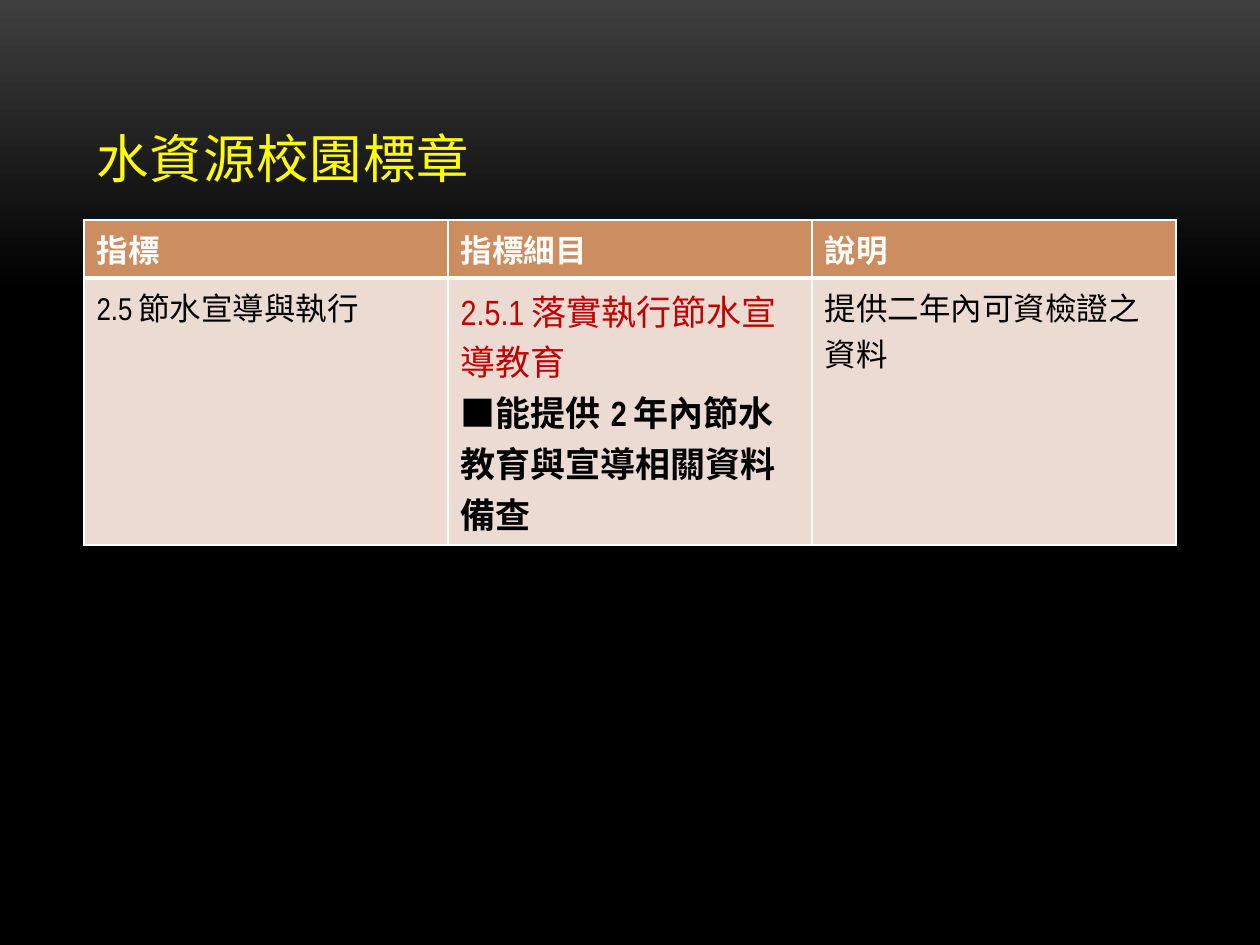
import copy

import pptx
import pptx.dml.color
import pptx.enum.text
import pptx.oxml
import pptx.oxml.ns
import pptx.util

PX = 914400 // 126
FONT = "Arial Narrow"
WHITE, BLACK, RED, YELLOW = "FFFFFF", "000000", "C00000", "FFFF00"
HEADER_FILL, BODY_FILL = "CC8E60", "ECDBD2"


def px(length):
    return pptx.util.Emu(length * PX)


def color(hex_value):
    return pptx.dml.color.RGBColor.from_string(hex_value)


def add_text(paragraph, text, size=18, fill=BLACK, bold=False, spacing=0):
    """Append a formatted run; spacing is in points."""
    run = paragraph.add_run()
    run.text = text
    run.font.name = FONT
    run.font.size = pptx.util.Pt(size)
    run.font.bold = bold
    run.font.color.rgb = color(fill)
    if spacing:
        run.font._element.set("spc", str(int(spacing * 100)))


def paint_background(slide):
    fill = slide.background.fill
    fill.gradient()
    fill.gradient_angle = 270
    stop_list = slide.element.find(".//" + pptx.oxml.ns.qn("a:gsLst"))
    stop_list.append(copy.deepcopy(stop_list[-1]))
    stops = [(0, "3F3F3F"), (0.31, BLACK), (1, BLACK)]
    for stop, (position, shade) in zip(fill.gradient_stops, stops):
        stop.position = position
        stop.color.rgb = color(shade)


def add_title(slide, left, top, width, height):
    title = slide.shapes.add_textbox(px(left), px(top), px(width), px(height))
    frame = title.text_frame
    frame.word_wrap = True
    frame.vertical_anchor = pptx.enum.text.MSO_ANCHOR.BOTTOM
    add_text(frame.paragraphs[0], "水資源校園標章", size=30, fill=YELLOW, spacing=0.5)


def style_cell(cell, fill, bottom_width):
    cell.fill.solid()
    cell.fill.fore_color.rgb = color(fill)
    properties = cell._tc.get_or_add_tcPr()
    widths = {"lnL": 1, "lnR": 1, "lnT": 1, "lnB": bottom_width}
    for index, (side, points) in enumerate(widths.items()):
        border = pptx.oxml.parse_xml(
            f'<a:{side} {pptx.oxml.ns.nsdecls("a")} w="{points * 12700}">'
            f'<a:solidFill><a:srgbClr val="{WHITE}"/></a:solidFill></a:{side}>'
        )
        properties.insert(index, border)


def add_indicator_table(slide, left, top, width, height):
    header_height = 58
    headings = ["指標", "指標細目", "說明"]
    # Each cell is a list of paragraphs, each paragraph a list of (text, format).
    header = [[[(heading, dict(fill=WHITE, bold=True))]] for heading in headings]
    details = [
        [[("2.5節水宣導與執行", {})]],
        [
            [("2.5.1落實執行節水宣導教育", dict(size=20, fill=RED))],
            [
                ("■", dict(size=20)),
                ("能提供2年內節水教育與宣導相關資料備查", dict(size=20, bold=True)),
            ],
        ],
        [[("提供二年內可資檢證之資料", {})]],
    ]
    table = slide.shapes.add_table(
        2, len(headings), px(left), px(top), px(width), px(height)
    ).table
    table.rows[0].height = px(header_height)
    table.rows[1].height = px(height - header_height)

    row_styles = [(header, HEADER_FILL, 3), (details, BODY_FILL, 1)]
    for row, (contents, fill, bottom_width) in zip(table.rows, row_styles):
        for cell, paragraphs in zip(row.cells, contents):
            style_cell(cell, fill, bottom_width)
            for index, runs in enumerate(paragraphs):
                frame = cell.text_frame
                paragraph = frame.add_paragraph() if index else frame.paragraphs[0]
                for text, text_format in runs:
                    add_text(paragraph, text, **text_format)


def main():
    deck = pptx.Presentation()
    deck.slide_width, deck.slide_height = px(1260), px(945)
    slide = deck.slides.add_slide(deck.slide_layouts[6])
    paint_background(slide)
    add_title(slide, 84, 38, 1092, 157)
    add_indicator_table(slide, 84, 220, 1092, 325)
    deck.save("out.pptx")


if __name__ == "__main__":
    main()
